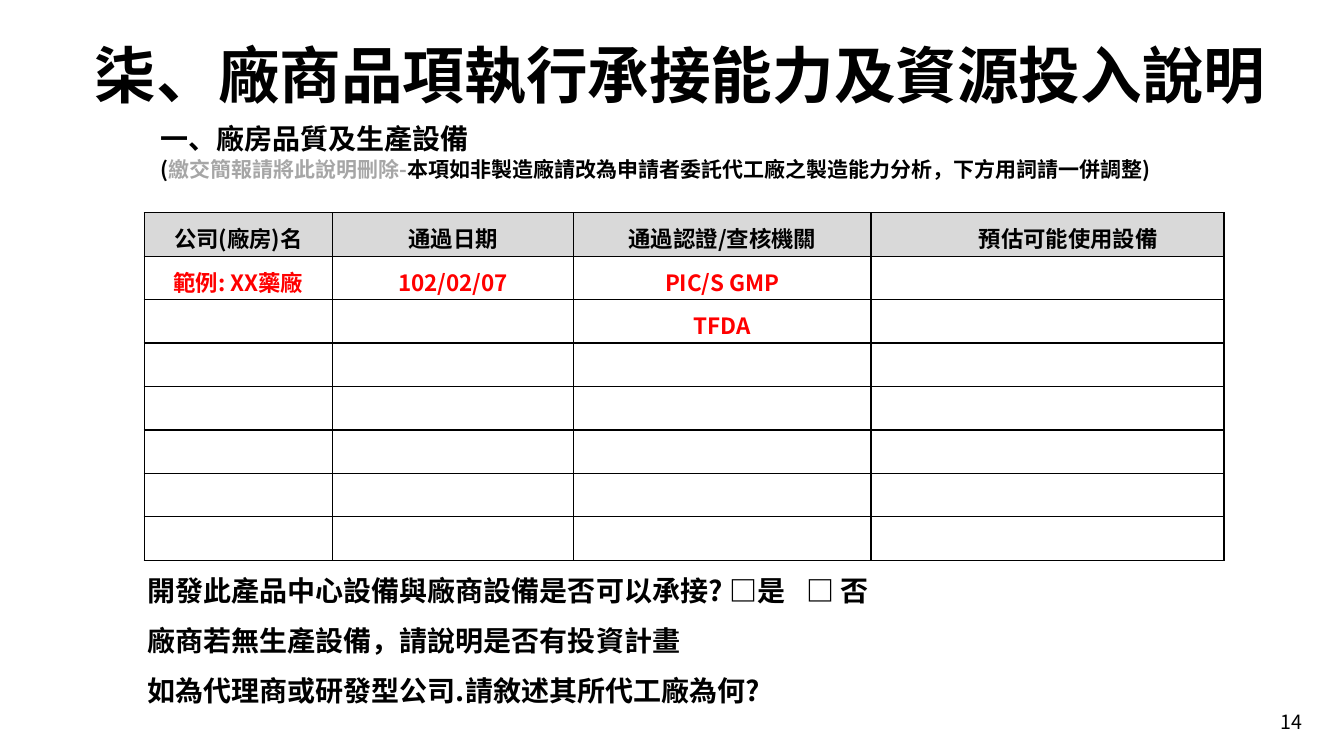
from lxml import etree
from pptx import Presentation
from pptx.dml.color import RGBColor as Rgb
from pptx.enum.text import MSO_ANCHOR as Anchor, MSO_AUTO_SIZE as Auto, PP_ALIGN as Align
from pptx.oxml.ns import qn
from pptx.util import Inches, Pt

FONT = "Noto Sans CJK SC"
HUES = {"ink": "000000", "head": "D9D9D9", "red": "FF0000", "gray": "A6A6A6"}
COLS = [1.87, 2.39, 2.95, 3.5]
ROWS = 8
HEADS = ["公司(廠房)名", "通過日期", "通過認證/查核機關", "預估可能使用設備"]
CELLS = {
    (1, 0): "範例: XX藥廠",
    (1, 1): "102/02/07",
    (1, 2): "PIC/S GMP",
    (2, 2): "TFDA",
}
ASKS = [
    "開發此產品中心設備與廠商設備是否可以承接? □是\t□ 否",
    "廠商若無生產設備，請說明是否有投資計畫",
    "如為代理商或研發型公司.請敘述其所代工廠為何?",
]


def add_run(para, text, size, hue="ink", bold=True):
    run = para.add_run()
    run.text = text
    font = run.font
    font.name, font.size, font.bold = FONT, Pt(size), bold
    font.color.rgb = Rgb.from_string(HUES[hue])
    etree.SubElement(run._r.get_or_add_rPr(), qn("a:ea"), typeface=FONT)


def set_frame(frame, top):
    frame.word_wrap = True
    frame.auto_size = Auto.NONE
    frame.vertical_anchor = Anchor.TOP
    frame.margin_left = frame.margin_right = frame.margin_bottom = 0
    frame.margin_top = Inches(top)


def add_box(slide, left, top, width, height, inset=0.01):
    box = slide.shapes.add_textbox(*map(Inches, (left, top, width, height)))
    set_frame(box.text_frame, inset)
    return box.text_frame


def add_title(slide, text):
    title = slide.shapes.title
    title.left, title.top = Inches(0.94), Inches(0.28)
    title.width, title.height = Inches(12.31), Inches(0.75)
    set_frame(title.text_frame, 0.01)
    para = title.text_frame.paragraphs[0]
    para.alignment = Align.LEFT
    para.line_spacing = Pt(58)
    add_run(para, text, 44)


def add_intro(slide):
    frame = add_box(slide, 1.59, 1.17, 10.13, 0.62)
    head = frame.paragraphs[0]
    head.line_spacing = Pt(25.5)
    add_run(head, "一、廠房品質及生產設備", 20)
    note = frame.add_paragraph()
    note.line_spacing = Pt(19)
    add_run(note, "(", 15)
    add_run(note, "繳交簡報請將此說明刪除-", 15, "gray")
    add_run(note, "本項如非製造廠請改為申請者委託代工廠之製造能力分析，下方用詞請一併調整)", 15)


def add_edges(cell):
    props = cell._tc.get_or_add_tcPr()
    for spot, side in enumerate(("lnL", "lnR", "lnT", "lnB")):
        line = etree.Element(qn("a:" + side), w=str(Pt(1)))
        fill = etree.SubElement(line, qn("a:solidFill"))
        etree.SubElement(fill, qn("a:srgbClr"), val=HUES["ink"])
        props.insert(spot, line)


def add_grid(slide):
    high = 3.45
    grid = slide.shapes.add_table(
        ROWS, len(COLS), Inches(1.43), Inches(2.11), Inches(sum(COLS)), Inches(high)
    ).table
    grid.first_row = grid.horz_banding = False
    for col, width in zip(grid.columns, COLS):
        col.width = Inches(width)
    texts = CELLS | {(0, col): text for col, text in enumerate(HEADS)}
    for row, line in enumerate(grid.rows):
        line.height = Inches(high / ROWS)
        for col, cell in enumerate(line.cells):
            cell.margin_left = cell.margin_right = cell.margin_bottom = 0
            cell.margin_top = Inches(0.09)
            if row == 0:
                cell.fill.solid()
                cell.fill.fore_color.rgb = Rgb.from_string(HUES["head"])
            else:
                cell.fill.background()
            add_edges(cell)
            if (row, col) in texts:
                para = cell.text_frame.paragraphs[0]
                para.alignment = Align.CENTER
                add_run(para, texts[row, col], 16, "red" if row else "ink")
    # The last heading is indented, not centred
    last = grid.cell(0, len(COLS) - 1).text_frame.paragraphs[0]
    last.alignment = Align.LEFT
    last._p.get_or_add_pPr().set("marL", str(Inches(1.07)))


def add_asks(slide):
    frame = add_box(slide, 1.46, 5.51, 7.45, 1.53)
    for num, text in enumerate(ASKS):
        para = frame.add_paragraph() if num else frame.paragraphs[0]
        para.line_spacing = Pt(36)
        if "\t" in text:
            tabs = etree.SubElement(para._p.get_or_add_pPr(), qn("a:tabLst"))
            etree.SubElement(tabs, qn("a:tab"), pos=str(Inches(6.54)), algn="l")
        add_run(para, text, 20)


def main():
    deck = Presentation()
    deck.slide_width, deck.slide_height = Inches(13.33), Inches(7.5)
    slide = deck.slides.add_slide(deck.slide_layouts[5])

    # Heading and intro
    add_title(slide, "柒、廠商品項執行承接能力及資源投入說明")
    add_intro(slide)

    # Plant table and questions
    add_grid(slide)
    add_asks(slide)

    # Page number
    page = add_box(slide, 12.7, 7.01, 0.3, 0.29, 0.03)
    add_run(page.paragraphs[0], "14", 14, bold=False)

    deck.save("out.pptx")


if __name__ == "__main__":
    main()
